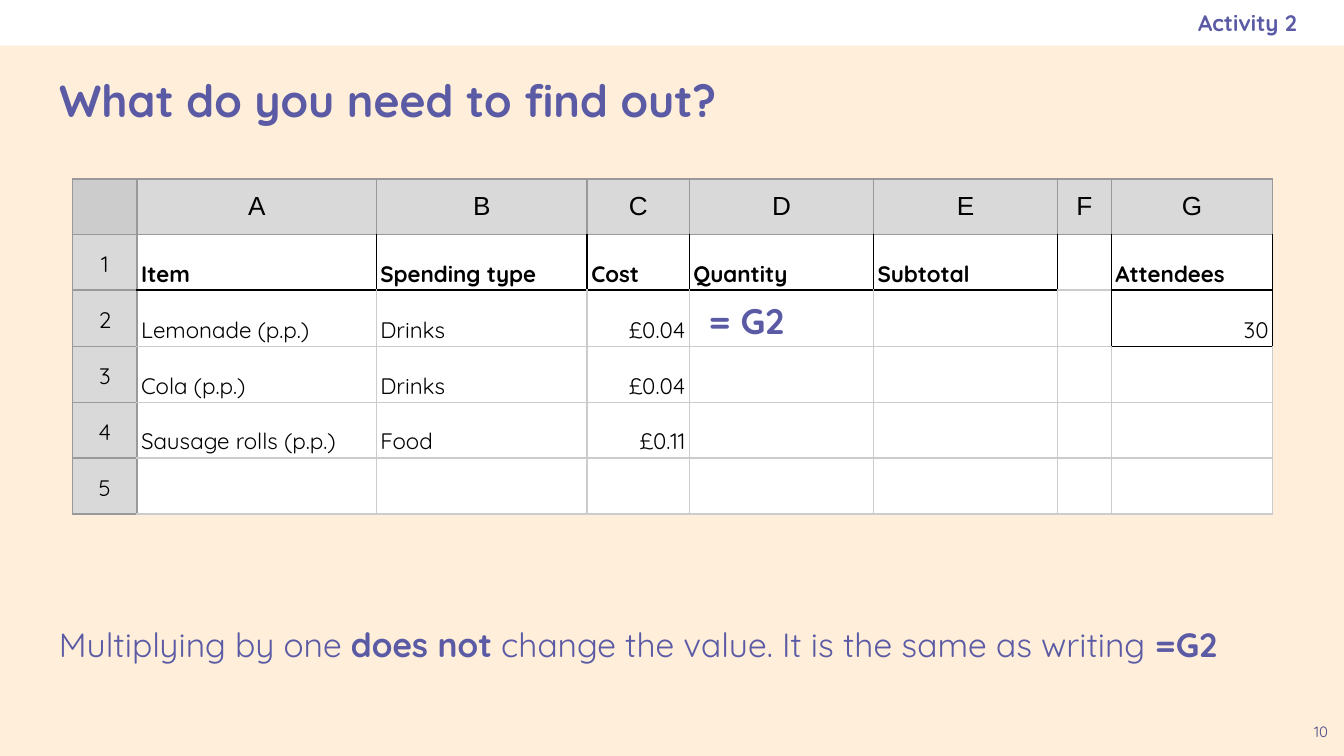
from lxml.etree import SubElement
from pptx import Presentation
from pptx.dml.color import RGBColor
from pptx.enum.shapes import MSO_SHAPE
from pptx.enum.text import MSO_ANCHOR, MSO_AUTO_SIZE, PP_ALIGN
from pptx.oxml.ns import qn
from pptx.util import Inches, Pt

CREAM = RGBColor(0xFF, 0xEF, 0xDA)
WHITE = RGBColor(0xFF, 0xFF, 0xFF)
BLACK = RGBColor(0, 0, 0)
PURPLE = RGBColor(0x5B, 0x5B, 0xA5)
DARK_PURPLE = RGBColor(0x49, 0x49, 0x85)
CORNER_GRAY = RGBColor(0xCC, 0xCC, 0xCC)
HEADER_GRAY = RGBColor(0xD9, 0xD9, 0xD9)
HEADER_LINE = RGBColor(0x99, 0x99, 0x99)
GRID_LINE = RGBColor(0xCC, 0xCC, 0xCC)


def write(frame, text, size=12, color=BLACK, bold=False, font="Quicksand",
          align=PP_ALIGN.LEFT, spacing=None):
    para = frame.paragraphs[0]
    para.alignment = align
    if spacing:
        para.line_spacing = spacing
    span = para.add_run()
    span.text = text
    span.font.name = font
    span.font.size = Pt(size)
    span.font.bold = bold
    span.font.color.rgb = color


def set_border(cell, side, color):
    line = SubElement(cell._tc.get_or_add_tcPr(), qn(f"a:ln{side}"), w=str(Pt(1)))
    fill = SubElement(line, qn("a:solidFill"))
    SubElement(fill, qn("a:srgbClr"), val=str(color))


deck = Presentation()
deck.slide_width = Inches(10)
deck.slide_height = Inches(10) * 9 // 16
page = deck.slides.add_slide(deck.slide_layouts[5])
page.background.fill.solid()
page.background.fill.fore_color.rgb = CREAM

band = page.shapes.add_shape(MSO_SHAPE.RECTANGLE, 0, 0, Inches(10), Inches(0.34))
band.shadow.inherit = False
band.fill.solid()
band.fill.fore_color.rgb = WHITE
band.line.fill.background()

title = page.shapes.title
title.left, title.top = Inches(0.34), Inches(0.36)
title.width, title.height = Inches(9.32), Inches(0.76)
number_box = page.shapes.add_textbox(Inches(9.66), Inches(5.28), Inches(0.34), Inches(0.34))
activity_box = page.shapes.add_textbox(Inches(5.75), 0, Inches(3.9), Inches(0.34))
body_box = page.shapes.add_textbox(Inches(0.34), Inches(4.5), Inches(9.32), Inches(0.76))

for box in (title, number_box, activity_box, body_box):
    frame = box.text_frame
    frame.word_wrap = True
    frame.auto_size = MSO_AUTO_SIZE.NONE
    frame.margin_left = frame.margin_right = Inches(0.1)
    frame.margin_top = frame.margin_bottom = Inches(0.1)
    frame.vertical_anchor = MSO_ANCHOR.TOP
title.text_frame.vertical_anchor = MSO_ANCHOR.MIDDLE
activity_box.text_frame.vertical_anchor = MSO_ANCHOR.MIDDLE
activity_box.text_frame.margin_right = 0

write(title.text_frame, "What do you need to find out?", size=24, color=PURPLE, bold=True)
write(number_box.text_frame, "10", size=8, color=DARK_PURPLE, align=PP_ALIGN.CENTER)
write(activity_box.text_frame, "Activity 2", color=PURPLE, bold=True, align=PP_ALIGN.RIGHT)
for text, bold in [
    ("Multiplying by one ", False),
    ("does not", True),
    (" change the value. It is the same as writing", False),
    (" =G2", True),
]:
    write(body_box.text_frame, text, size=18, color=PURPLE, bold=bold, spacing=1.15)
body_box.text_frame.paragraphs[0].space_after = Pt(16)

sheet = [
    ["", "A", "B", "C", "D", "E", "F", "G"],
    ["1", "Item", "Spending type", "Cost", "Quantity", "Subtotal", "", "Attendees"],
    ["2", "Lemonade (p.p.)", "Drinks", "£0.04", "= G2", "", "", "30"],
    ["3", "Cola (p.p.)", "Drinks", "£0.04", "", "", "", ""],
    ["4", "Sausage rolls (p.p.)", "Food", "£0.11", "", "", "", ""],
    ["5", "", "", "", "", "", "", ""],
]
column_widths = [0.48, 1.78, 1.57, 0.76, 1.37, 1.37, 0.4, 1.2]
table_height = Inches(2.49)
table = page.shapes.add_table(
    len(sheet), len(column_widths), Inches(0.54), Inches(1.33),
    Inches(sum(column_widths)), table_height).table
table.first_row = False
table.horz_banding = False
for column, width in zip(table.columns, column_widths):
    column.width = Inches(width)

for row, values in enumerate(sheet):
    table.rows[row].height = table_height // len(sheet)
    for col, text in enumerate(values):
        cell = table.cell(row, col)
        is_header = row == 0 or col == 0
        cell.margin_left = cell.margin_right = Inches(0.03)
        cell.margin_top = cell.margin_bottom = Inches(0.02)
        cell.vertical_anchor = MSO_ANCHOR.MIDDLE if is_header else MSO_ANCHOR.BOTTOM

        for side, edge in (("L", col), ("R", col + 1)):
            if row == 0 or edge <= 1:
                color = HEADER_LINE
            elif row == 1 or (row == 2 and edge >= 7):
                color = BLACK
            else:
                color = GRID_LINE
            set_border(cell, side, color)
        for side, edge in (("T", row), ("B", row + 1)):
            if col == 0 or edge <= 1:
                color = HEADER_LINE
            elif (edge == 2 and col != 6) or (edge == 3 and col == 7):
                color = BLACK
            else:
                color = GRID_LINE
            set_border(cell, side, color)

        cell.fill.solid()
        if row == 0 and col == 0:
            cell.fill.fore_color.rgb = CORNER_GRAY
        else:
            cell.fill.fore_color.rgb = HEADER_GRAY if is_header else WHITE

        if not text:
            continue
        if row == 0:
            write(cell.text_frame, text, size=14, font="Arial", align=PP_ALIGN.CENTER)
        elif col == 0:
            write(cell.text_frame, text, align=PP_ALIGN.CENTER, spacing=1.15)
        elif text.startswith("="):
            cell.margin_right = Inches(0.55)
            write(cell.text_frame, text, size=19, color=PURPLE, bold=True,
                  align=PP_ALIGN.CENTER, spacing=1.15)
        else:
            is_amount = text.startswith("£") or text.isdigit()
            write(cell.text_frame, text, bold=row == 1, spacing=1.15,
                  align=PP_ALIGN.RIGHT if is_amount else PP_ALIGN.LEFT)

deck.save("out.pptx")
